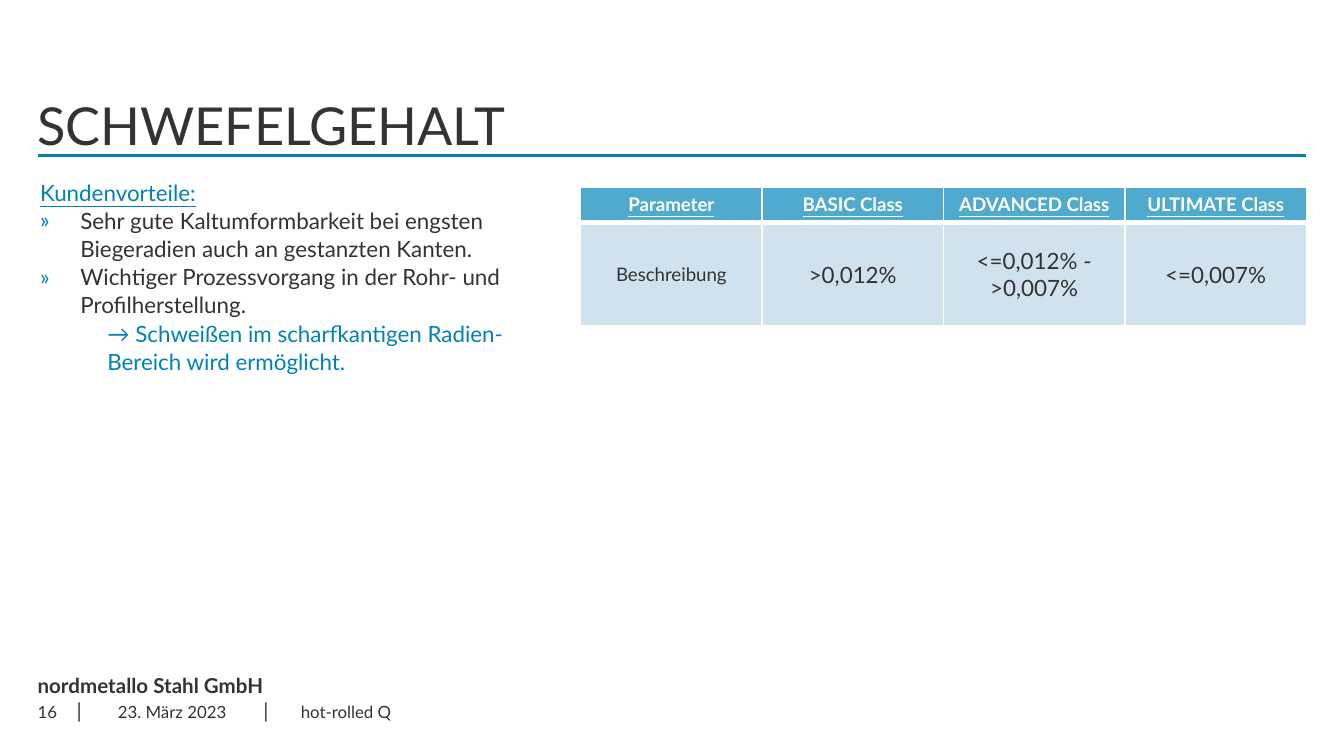
"""Build the slide on sulphur content with its class table."""
from lxml import etree
from pptx import Presentation
from pptx.dml.color import RGBColor
from pptx.enum.shapes import MSO_CONNECTOR as Conn
from pptx.enum.text import MSO_ANCHOR as Anchor, PP_ALIGN as Align
from pptx.oxml.ns import qn
from pptx.util import Inches, Pt

DARK = RGBColor(0x33, 0x33, 0x33)
BLUE = RGBColor(0x00, 0x82, 0xB4)
HEAD = RGBColor(0x50, 0xAA, 0xCD)
PALE = RGBColor(0xD0, 0xE2, 0xED)
WHITE = RGBColor(0xFF, 0xFF, 0xFF)


def style(para, size, color, bold=False, line=False):
    font = para.font
    font.name, font.size = "Lato", Pt(size)
    font.bold, font.underline = bold, line
    font.color.rgb = color


def add_box(x, y, w, h, pad=0, anchor=Anchor.TOP):
    box = slide.shapes.add_textbox(Inches(x), Inches(y), Inches(w), Inches(h))
    frame = box.text_frame
    frame.word_wrap = True
    frame.vertical_anchor = anchor
    frame.margin_left = frame.margin_right = Inches(pad)
    frame.margin_top = frame.margin_bottom = Inches(pad / 2)
    return frame


prs = Presentation()
prs.slide_width, prs.slide_height = Inches(10), Inches(10 * 9 / 16)
slide = prs.slides.add_slide(prs.slide_layouts[6])

rule = slide.shapes.add_connector(
    Conn.STRAIGHT, Inches(0.28), Inches(1.16), Inches(9.72), Inches(1.16))
rule.line.color.rgb = BLUE
rule.line.width = Pt(1.5)
etree.SubElement(rule._element.spPr, qn("a:effectLst"))

title = add_box(0.28, 0.19, 9.44, 0.97, anchor=Anchor.BOTTOM).paragraphs[0]
title.text = "SCHWEFELGEHALT"
title.line_spacing = Pt(32)
style(title, 28, DARK)

for text, x, y, w, h, pad, size, bold, align, anchor in [
    ("nordmetallo Stahl GmbH", 0.28, 5.01, 6.44, 0.19, 0, 11, True, Align.LEFT, Anchor.TOP),
    ("|", 0.57, 5.19, 0.22, 0.19, 0, 11, False, Align.LEFT, Anchor.TOP),
    ("|", 1.96, 5.19, 0.22, 0.19, 0, 11, False, Align.LEFT, Anchor.TOP),
    ("23. März 2023", 0.59, 5.15, 1.38, 0.3, 0.1, 9, False, Align.CENTER, Anchor.MIDDLE),
    ("16", 0.28, 5.15, 0.31, 0.3, 0, 9, False, Align.LEFT, Anchor.MIDDLE),
    ("hot-rolled Q", 2.14, 5.15, 4.56, 0.3, 0.1, 9, False, Align.LEFT, Anchor.MIDDLE),
]:
    para = add_box(x, y, w, h, pad, anchor).paragraphs[0]
    para.text = text
    para.alignment = align
    style(para, size, DARK, bold)

body = add_box(0.2, 1.28, 3.87, 1.55, 0.1)
intro = body.paragraphs[0]
intro.text = "Kundenvorteile:"
style(intro, 12, BLUE, line=True)

for text, left, mark, color in [
    ("Sehr gute Kaltumformbarkeit bei engsten Biegeradien auch an gestanzten Kanten.",
     0.3, "»", DARK),
    ("Wichtiger Prozessvorgang in der Rohr- und Profilherstellung.", 0.3, "»", DARK),
    ("→ Schweißen im scharfkantigen Radien- Bereich wird ermöglicht.", 0.5, "", BLUE),
]:
    para = body.add_paragraph()
    para.text = text
    para.level = 0 if mark else 1
    para.line_spacing = 1.05
    props = para._p.get_or_add_pPr()
    props.set("marL", str(Inches(left)))
    props.set("indent", str(Inches(-left if mark else 0)))
    if mark:
        tint = etree.SubElement(props, qn("a:buClr"))
        etree.SubElement(tint, qn("a:srgbClr"), val=str(BLUE))
        etree.SubElement(props, qn("a:buFont"), typeface="Lato")
        etree.SubElement(props, qn("a:buChar"), char=mark)
    style(para, 12, color)

rows = [
    ["Parameter", "BASIC Class", "ADVANCED Class", "ULTIMATE Class"],
    ["Beschreibung", ">0,012%", "<=0,012% - >0,007%", "<=0,007%"],
]
table = slide.shapes.add_table(
    2, 4, Inches(4.32), Inches(1.39), Inches(5.4), Inches(1.02)).table
for row, high in zip(table.rows, (0.25, 0.77)):
    row.height = Inches(high)

for r, texts in enumerate(rows):
    top = r == 0
    for c, text in enumerate(texts):
        cell = table.cell(r, c)
        cell.text = text
        cell.vertical_anchor = Anchor.TOP if top else Anchor.MIDDLE
        para = cell.text_frame.paragraphs[0]
        para.alignment = Align.CENTER
        style(para, 10 if top or c == 0 else 12, WHITE if top else DARK, top, top)
        props = cell._tc.get_or_add_tcPr()
        inner = "lnB" if top else "lnT"
        for side in ("lnL", "lnR", "lnT", "lnB"):
            width = Pt(3 if side == inner else 1)
            edge = etree.SubElement(props, qn("a:" + side), w=str(width))
            paint = etree.SubElement(edge, qn("a:solidFill"))
            etree.SubElement(paint, qn("a:srgbClr"), val=str(WHITE))
        cell.fill.solid()
        cell.fill.fore_color.rgb = HEAD if top else PALE

prs.save("out.pptx")
